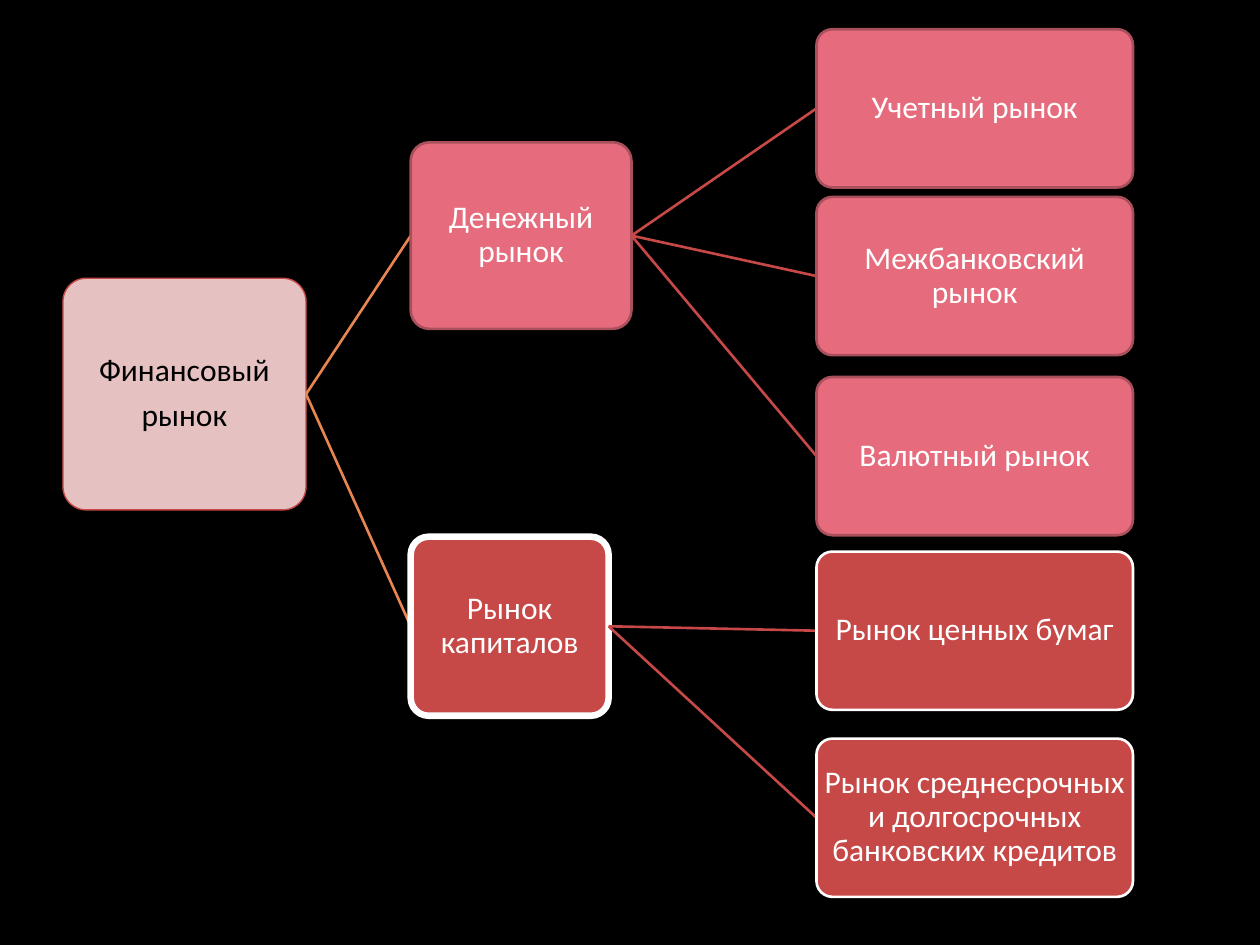
from lxml.etree import SubElement
from pptx import Presentation
from pptx.dml.color import RGBColor
from pptx.enum.shapes import MSO_CONNECTOR as Line, MSO_SHAPE as Shape
from pptx.enum.text import MSO_ANCHOR as Anchor, PP_ALIGN as Align
from pptx.oxml.ns import qn
from pptx.util import Cm, Pt

RIGHT_SIDE, LEFT_SIDE = 3, 1
ROSE, DARK_ROSE, RED, ORANGE = "E66C7D", "AA505C", "C64847", "E88651"
PALE, BLACK, WHITE = "E5C1C1", "000000", "FFFFFF"


def color(code):
    return RGBColor.from_string(code)


class Diagram:
    font_name = "Calibri"
    font_size = Pt(18)
    corner = 0.1
    inset = Cm(0.03)

    def __init__(self, page):
        self.page = page

    def background(self, code):
        fill = self.page.background.fill
        fill.solid()
        fill.fore_color.rgb = color(code)

    def box(self, text, place, fill, border, border_width=1.5, ink=WHITE):
        """Add a rounded box; place is left, top, width, height in cm."""
        box = self.page.shapes.add_shape(Shape.ROUNDED_RECTANGLE, *map(Cm, place))
        box.adjustments[0] = self.corner
        box.shadow.inherit = False
        box.fill.solid()
        box.fill.fore_color.rgb = color(fill)
        box.line.color.rgb = color(border)
        box.line.width = Pt(border_width)

        frame = box.text_frame
        frame.word_wrap = True
        frame.vertical_anchor = Anchor.MIDDLE
        frame.margin_left = frame.margin_right = self.inset
        frame.margin_top = frame.margin_bottom = self.inset
        frame.text = text
        for para in frame.paragraphs:
            para.alignment = Align.CENTER
            para.line_spacing = 0.9
            para.space_after = Pt(6.3)
            para.font.name = self.font_name
            para.font.size = self.font_size
            para.font.color.rgb = color(ink)
        return box

    def branch(self, parent, line_color, text, place, **style):
        """Add a box joined to its parent, with the line behind the new box."""
        link = self.page.shapes.add_connector(Line.STRAIGHT, 0, 0, 0, 0)
        link.line.color.rgb = color(line_color)
        link.line.width = Pt(1.5)
        SubElement(link._element.spPr, qn("a:effectLst"))
        child = self.box(text, place, **style)
        link.begin_connect(parent, RIGHT_SIDE)
        link.end_connect(child, LEFT_SIDE)
        return child


def main():
    deck = Presentation()
    deck.slide_width, deck.slide_height = Cm(25.4), Cm(19.05)
    diagram = Diagram(deck.slides.add_slide(deck.slide_layouts[6]))
    diagram.background(BLACK)

    market = diagram.box("Финансовый\nрынок", (1.27, 5.61, 4.9, 4.67),
                         PALE, RED, border_width=0.79, ink=BLACK)

    # name, place, fill, border, border width, segments with their tops
    sectors = [
        ("Денежный рынок", (8.28, 2.87, 4.45, 3.76), ROSE, DARK_ROSE, 1.5,
         [("Учетный рынок", 0.59),
          ("Межбанковский рынок", 3.97),
          ("Валютный рынок", 7.6)]),
        ("Рынок капиталов", (8.28, 10.82, 3.99, 3.61), RED, WHITE, 3.75,
         [("Рынок ценных бумаг", 11.12),
          ("Рынок среднесрочных и долгосрочных банковских кредитов", 14.89)]),
    ]
    for name, place, fill, border, border_width, segments in sectors:
        sector = diagram.branch(market, ORANGE, name, place, fill=fill,
                                border=border, border_width=border_width)
        for segment, top in segments:
            diagram.branch(sector, RED, segment, (16.46, top, 6.38, 3.19),
                           fill=fill, border=border)

    deck.save("out.pptx")


if __name__ == "__main__":
    main()
